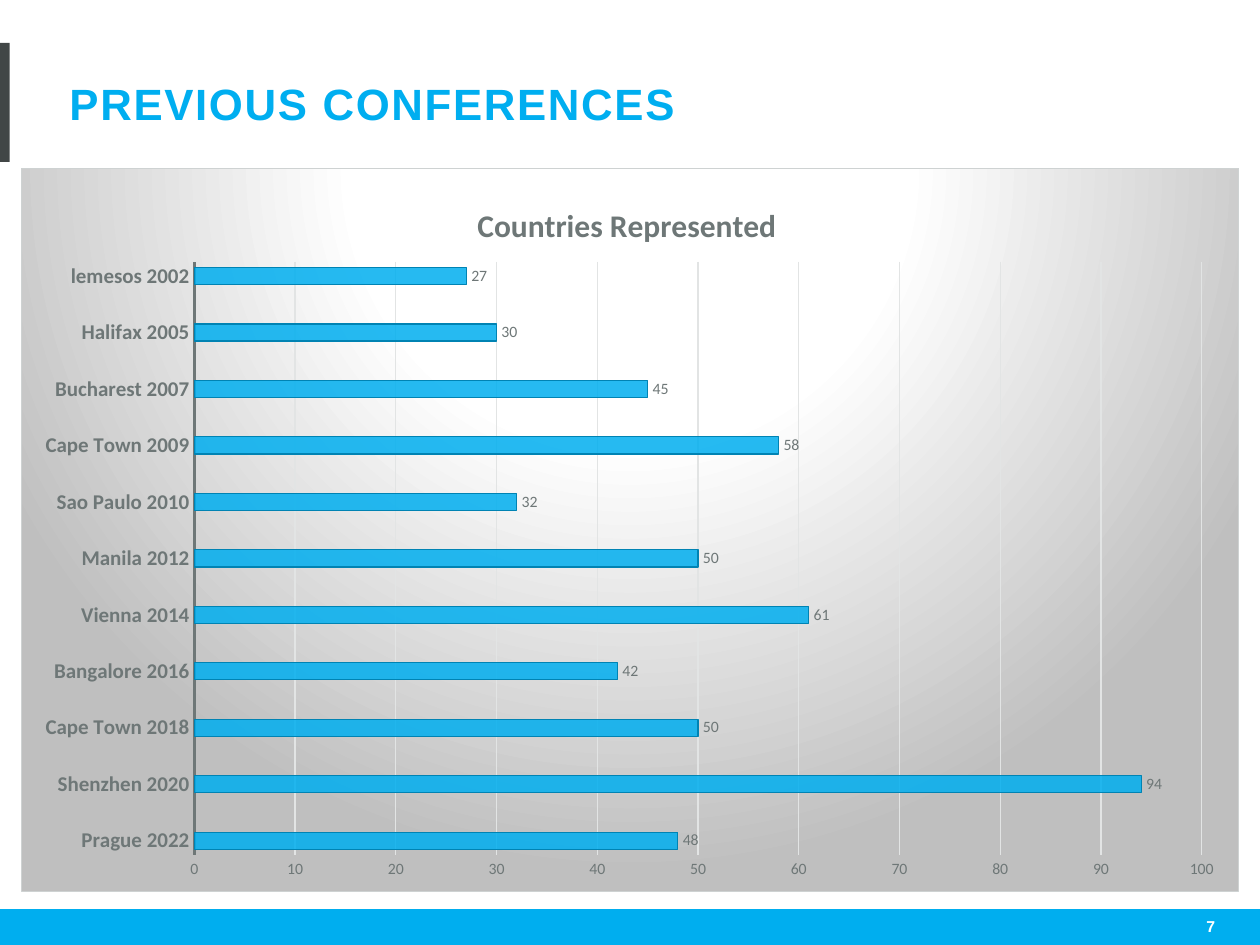
from dataclasses import dataclass
from typing import Optional

from lxml.etree import SubElement
from pptx import Presentation
from pptx.chart.data import CategoryChartData
from pptx.dml.color import RGBColor
from pptx.enum.chart import XL_CHART_TYPE, XL_LABEL_POSITION, XL_TICK_MARK
from pptx.enum.shapes import MSO_SHAPE
from pptx.enum.text import MSO_ANCHOR, PP_ALIGN
from pptx.oxml import parse_xml
from pptx.oxml.ns import nsdecls, qn
from pptx.util import Pt

BLUE = RGBColor(0x00, 0xAE, 0xEF)
TITLE_BLUE = RGBColor(0x00, 0xAE, 0xF0)
BAR_EDGE = RGBColor(0x00, 0x83, 0xB3)
DARK = RGBColor(0x41, 0x46, 0x46)
GRAY = RGBColor(0x6E, 0x77, 0x77)
GRID = RGBColor(0xE2, 0xE4, 0xE4)
WHITE = RGBColor(0xFF, 0xFF, 0xFF)


@dataclass
class Band:
    left: float
    top: float
    width: float
    height: float
    color: RGBColor
    outlined: bool = False


@dataclass
class Conference:
    name: str
    countries: Optional[int]


BANDS = [
    Band(0, 520, 720, 20, BLUE, True),
    Band(-0.5, 24.5, 6, 68, DARK),
]

CONFERENCES = [
    Conference("Prague 2022", 48),
    Conference("Shenzhen 2020", 94),
    Conference("Cape Town 2018", 50),
    Conference("Bangalore 2016", 42),
    Conference("Vienna 2014", 61),
    Conference("Manila 2012", 50),
    Conference("Sao Paulo 2010", 32),
    Conference("Cape Town 2009", 58),
    Conference("Bucharest 2007", 45),
    Conference("Halifax 2005", 30),
    Conference("lemesos 2002", 27),
]

PANEL_FORMAT = f"""
<c:spPr {nsdecls('c', 'a')}>
  <a:gradFill>
    <a:gsLst>
      <a:gs pos="0"><a:srgbClr val="FFFFFF"/></a:gs>
      <a:gs pos="39000"><a:srgbClr val="FFFFFF"/></a:gs>
      <a:gs pos="100000"><a:srgbClr val="BFBFBF"/></a:gs>
    </a:gsLst>
    <a:path path="circle">
      <a:fillToRect l="50000" t="-80000" r="50000" b="180000"/>
    </a:path>
  </a:gradFill>
  <a:ln w="9525"><a:solidFill><a:srgbClr val="CED2D2"/></a:solidFill></a:ln>
</c:spPr>"""


def style_font(font, name: str, size: float, color: RGBColor, bold: bool = False) -> None:
    font.name = name
    font.size = Pt(size)
    font.bold = bold
    font.color.rgb = color


def draw_band(slide, band: Band) -> None:
    sp = slide.shapes.add_shape(
        MSO_SHAPE.RECTANGLE, Pt(band.left), Pt(band.top), Pt(band.width), Pt(band.height)
    )
    sp.shadow.inherit = False
    sp.fill.solid()
    sp.fill.fore_color.rgb = band.color
    if band.outlined:
        sp.line.color.rgb = band.color
        sp.line.width = Pt(0.75)
    else:
        sp.line.fill.background()


def draw_title(slide, text: str) -> None:
    sp = slide.shapes.title
    sp.left, sp.top, sp.width, sp.height = Pt(32.5), Pt(26.5), Pt(537), Pt(65)
    tf = sp.text_frame
    tf.text = text
    tf.vertical_anchor = MSO_ANCHOR.MIDDLE
    p = tf.paragraphs[0]
    p.alignment = PP_ALIGN.LEFT
    r = p.runs[0]
    style_font(r.font, "Arial", 25, TITLE_BLUE, True)
    r.font._element.set("spc", "100")


def draw_page_number(slide, number: int) -> None:
    sp = slide.shapes.add_textbox(Pt(525.5), Pt(515), Pt(176), Pt(29))
    tf = sp.text_frame
    tf.word_wrap = True
    tf.vertical_anchor = MSO_ANCHOR.MIDDLE
    tf.text = str(number)
    p = tf.paragraphs[0]
    p.alignment = PP_ALIGN.RIGHT
    style_font(p.runs[0].font, "Arial", 9, WHITE, True)


def set_layout(parent, index: int, **values) -> None:
    for old in parent.findall(qn("c:layout")):
        parent.remove(old)
    layout = parse_xml(f"<c:layout {nsdecls('c')}/>")
    manual = SubElement(layout, qn("c:manualLayout"))
    for tag, value in values.items():
        SubElement(manual, qn(f"c:{tag}")).set("val", str(value))
    parent.insert(index, layout)


def format_axes(chart) -> None:
    cat, val = chart.category_axis, chart.value_axis
    for axis, size, bold in ((cat, 12, True), (val, 9, False)):
        axis.major_tick_mark = XL_TICK_MARK.NONE
        axis.minor_tick_mark = XL_TICK_MARK.NONE
        style_font(axis.tick_labels.font, "Calibri", size, GRAY, bold)
    cat.format.line.color.rgb = GRAY
    cat.format.line.width = Pt(1.5)
    cat.has_major_gridlines = False
    val.minimum_scale, val.maximum_scale, val.major_unit = 0, 100, 10
    val.format.line.fill.background()
    val.has_major_gridlines = True
    val.major_gridlines.format.line.color.rgb = GRID
    val.major_gridlines.format.line.width = Pt(0.75)


def format_bars(chart) -> None:
    plot = chart.plots[0]
    plot.gap_width = 65
    plot.vary_by_categories = False
    series = plot.series[0]
    series.invert_if_negative = False
    series.format.fill.solid()
    series.format.fill.fore_color.rgb = BLUE
    series.format.line.color.rgb = BAR_EDGE
    series.format.line.width = Pt(0.75)
    color = chart.element.xpath(".//c:ser/c:spPr/a:solidFill/a:srgbClr")[0]
    SubElement(color, qn("a:alpha")).set("val", "85000")
    labels = series.data_labels
    labels.show_value = True
    labels.position = XL_LABEL_POSITION.OUTSIDE_END
    style_font(labels.font, "Calibri", 9, GRAY)


def draw_chart(slide, title: str, conferences: list[Conference]) -> None:
    data = CategoryChartData()
    spacer = Conference("", None)
    rows = [row for conf in conferences for row in (conf, spacer)][:-1]
    data.categories = [row.name for row in rows]
    data.add_series("Series 1", [row.countries for row in rows])
    chart = slide.shapes.add_chart(
        XL_CHART_TYPE.BAR_CLUSTERED, Pt(12), Pt(96), Pt(696), Pt(414), data
    ).chart
    style_font(chart.font, "Calibri", 10, DARK)
    chart.has_legend = False
    chart.has_title = True
    tf = chart.chart_title.text_frame
    tf.text = title
    style_font(tf.paragraphs[0].runs[0].font, "Calibri", 18, GRAY, True)
    chart.chart_title.include_in_layout = False
    format_axes(chart)
    format_bars(chart)
    root = chart.element
    set_layout(root.xpath("c:chart/c:title")[0], 1, xMode="edge", yMode="edge", x=0.37, y=0.04)
    set_layout(
        root.xpath("c:chart/c:plotArea")[0], 0, layoutTarget="inner",
        xMode="edge", yMode="edge", x=0.142, y=0.129, w=0.828, h=0.82,
    )
    root.find(qn("c:chart")).addnext(parse_xml(PANEL_FORMAT))


def main() -> None:
    prs = Presentation()
    prs.slide_width, prs.slide_height = Pt(720), Pt(540)
    slide = prs.slides.add_slide(prs.slide_layouts[5])
    for band in BANDS:
        draw_band(slide, band)
    draw_page_number(slide, 7)
    draw_title(slide, "PREVIOUS CONFERENCES")
    draw_chart(slide, "Countries Represented", CONFERENCES)
    prs.save("out.pptx")


if __name__ == "__main__":
    main()
